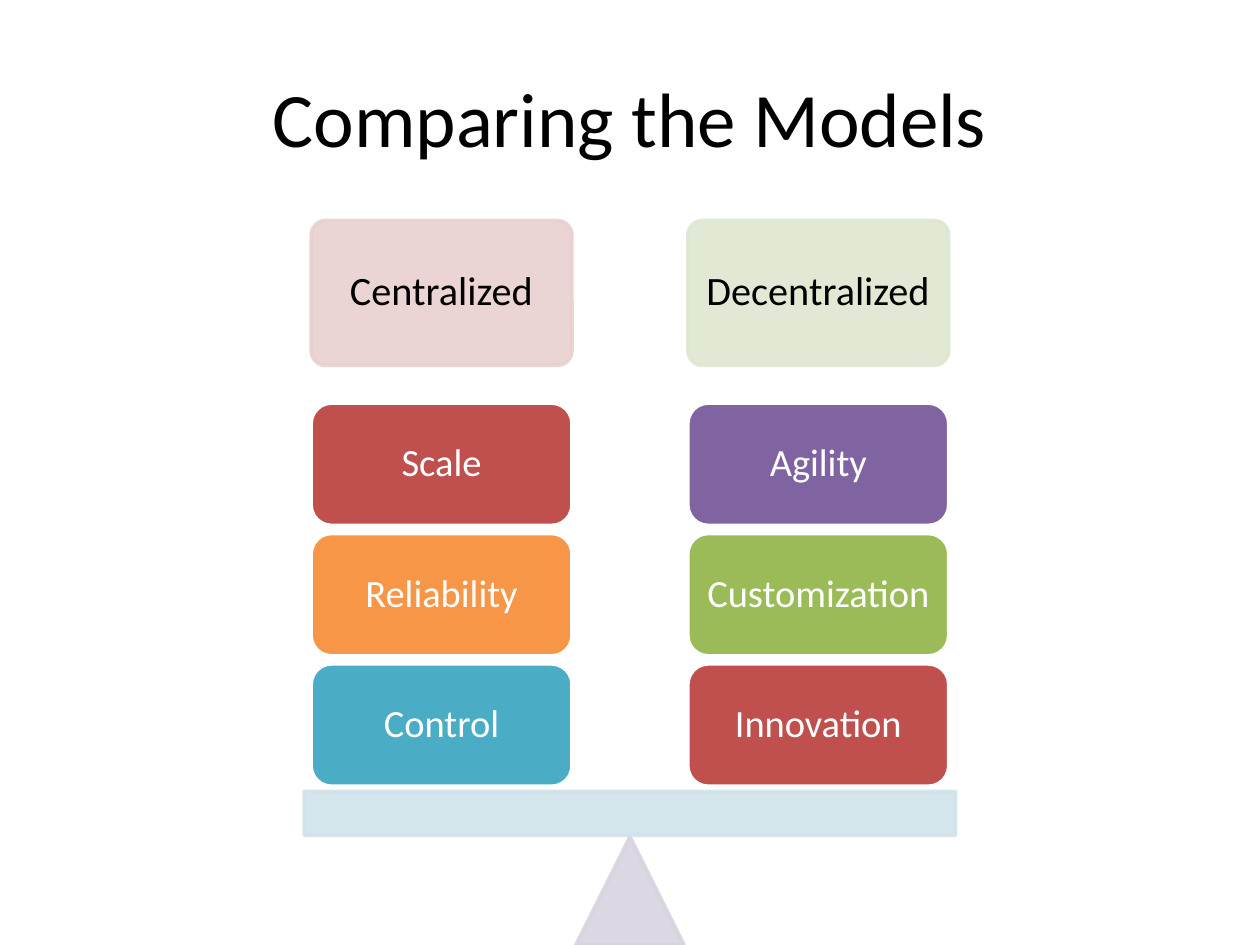
from dataclasses import dataclass

from lxml import etree
from pptx import Presentation
from pptx.dml.color import RGBColor
from pptx.enum.shapes import MSO_SHAPE
from pptx.enum.text import MSO_ANCHOR, PP_ALIGN
from pptx.oxml.ns import qn
from pptx.util import Inches, Pt

ROUNDED = MSO_SHAPE.ROUNDED_RECTANGLE
RECTANGLE = MSO_SHAPE.RECTANGLE
TRIANGLE = MSO_SHAPE.ISOSCELES_TRIANGLE
MIDDLE = MSO_ANCHOR.MIDDLE
CENTER = PP_ALIGN.CENTER


@dataclass(frozen=True)
class Theme:
    font: str = "Calibri"
    title_size: int = 44
    header_size: int = 23
    block_size: int = 22
    line_width: int = 2
    pale_opacity: int = 90
    black: str = "000000"
    white: str = "FFFFFF"
    red: str = "C0504D"
    orange: str = "F79646"
    teal: str = "4BACC6"
    purple: str = "8064A2"
    green: str = "9BBB59"
    pale_red: str = "E8D0D0"
    pale_green: str = "DEE7D1"
    pale_blue: str = "D0E3EA"
    pale_purple: str = "D8D3E0"


THEME = Theme()

# Grid in inches: two columns of blocks stacked on the beam
SLIDE_W, SLIDE_H = 10, 7.5
COLUMN_X, COLUMN_STEP, BOX_W = 2.47, 2.99, 2.07
HEADER_Y, HEADER_H = 1.75, 1.15
BLOCK_Y, BLOCK_STEP, BLOCK_H = 3.2, 1.035, 0.97
BEAM_W, BEAM_Y, BEAM_H = 5.17, 6.28, 0.35
PIVOT = 0.86

MODELS = [
    ("Centralized", THEME.pale_red,
     [("Scale", THEME.red), ("Reliability", THEME.orange), ("Control", THEME.teal)]),
    ("Decentralized", THEME.pale_green,
     [("Agility", THEME.purple), ("Customization", THEME.green), ("Innovation", THEME.red)]),
]


def write_text(sp, text, size, color, inset, spacing=1.0):
    tf = sp.text_frame
    tf.word_wrap = True
    tf.vertical_anchor = MIDDLE
    tf.margin_left = tf.margin_right = Inches(inset)
    tf.margin_top = tf.margin_bottom = Inches(inset)
    p = tf.paragraphs[0]
    p.text = text
    p.alignment = CENTER
    p.line_spacing = spacing
    p.font.name = THEME.font
    p.font.size = Pt(size)
    p.font.color.rgb = RGBColor.from_string(color)


def add_box(s, kind, x, y, w, h, fill, line):
    sp = s.shapes.add_shape(kind, Inches(x), Inches(y), Inches(w), Inches(h))
    sp.shadow.inherit = False
    sp.fill.solid()
    sp.fill.fore_color.rgb = RGBColor.from_string(fill)
    sp.line.color.rgb = RGBColor.from_string(line)
    sp.line.width = Pt(THEME.line_width)
    return sp


def add_pale_box(s, kind, x, y, w, h, color):
    """Add a slightly transparent box whose outline matches its fill."""
    sp = add_box(s, kind, x, y, w, h, color, color)
    for clr in sp.element.spPr.iter(qn("a:srgbClr")):
        etree.SubElement(clr, qn("a:alpha"), val=str(THEME.pale_opacity * 1000))
    return sp


def add_title(s, text):
    sp = s.shapes.add_textbox(Inches(0.5), Inches(0.3), Inches(9), Inches(1.25))
    write_text(sp, text, THEME.title_size, THEME.black, 0.05)


def add_header(s, column, text, color):
    x = COLUMN_X + column * COLUMN_STEP
    sp = add_pale_box(s, ROUNDED, x, HEADER_Y, BOX_W, HEADER_H, color)
    sp.adjustments[0] = 0.1
    write_text(sp, text, THEME.header_size, THEME.black, 0.1, 0.9)


def add_block(s, column, row, text, color):
    x = COLUMN_X + column * COLUMN_STEP
    y = BLOCK_Y + row * BLOCK_STEP
    sp = add_box(s, ROUNDED, x, y, BOX_W, BLOCK_H, color, THEME.white)
    write_text(sp, text, THEME.block_size, THEME.white, 0.09, 0.9)


def add_scale(s):
    add_pale_box(s, TRIANGLE, (SLIDE_W - PIVOT) / 2, SLIDE_H - PIVOT,
                 PIVOT, PIVOT, THEME.pale_purple)
    add_pale_box(s, RECTANGLE, (SLIDE_W - BEAM_W) / 2, BEAM_Y,
                 BEAM_W, BEAM_H, THEME.pale_blue)


def main():
    prs = Presentation()
    prs.slide_width, prs.slide_height = Inches(SLIDE_W), Inches(SLIDE_H)
    s = prs.slides.add_slide(prs.slide_layouts[6])

    add_title(s, "Comparing the Models")

    # Pivot and beam
    add_scale(s)

    # One stack of blocks per model
    for column, (name, color, strengths) in enumerate(MODELS):
        add_header(s, column, name, color)
        for row, (strength, fill) in enumerate(strengths):
            add_block(s, column, row, strength, fill)

    prs.save("out.pptx")


if __name__ == "__main__":
    main()
